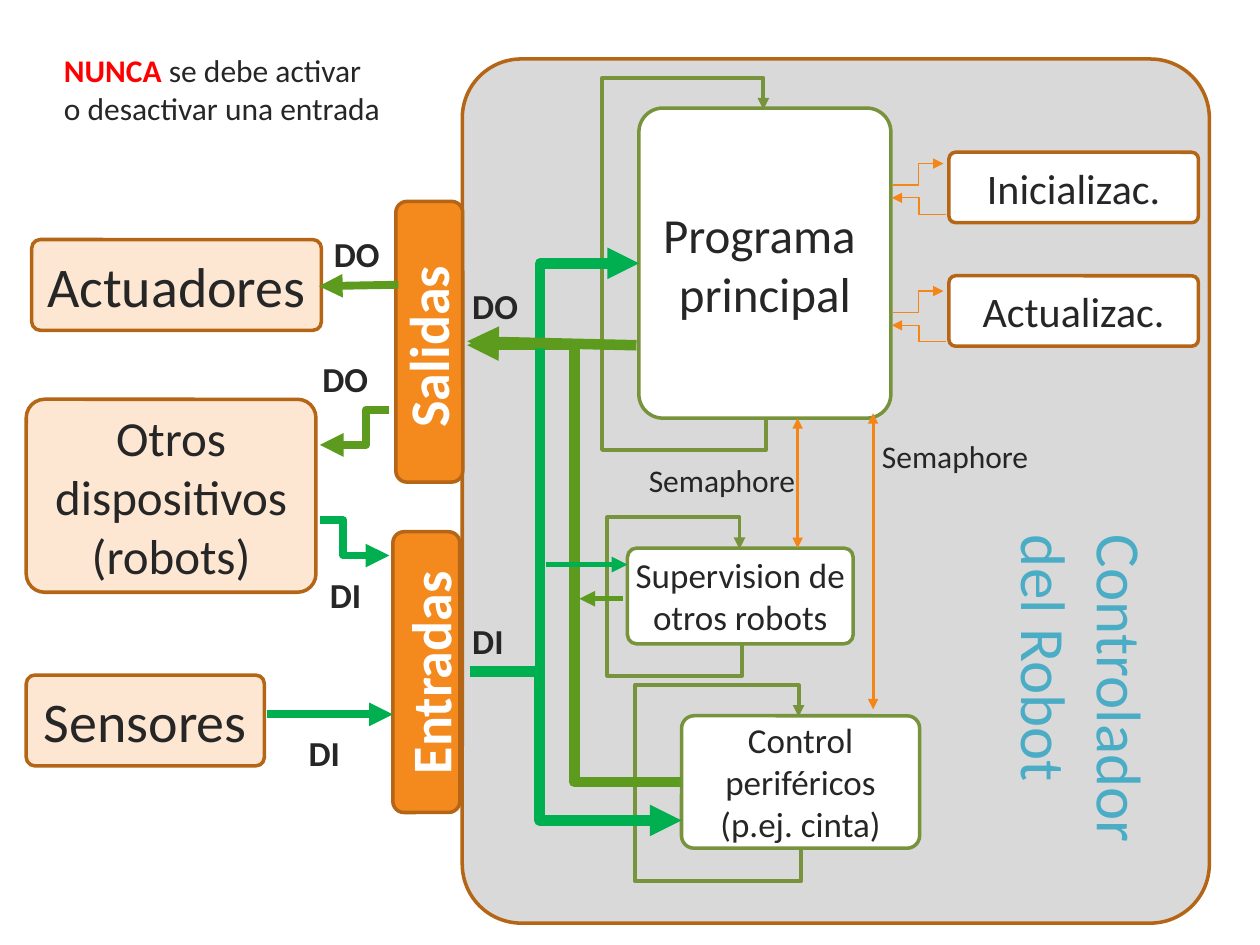
from dataclasses import dataclass
from typing import Any

import lxml.etree
import pptx
import pptx.dml.color
import pptx.enum.shapes
import pptx.enum.text
import pptx.oxml.ns
import pptx.util

Cm = pptx.util.Cm
Pt = pptx.util.Pt
ALIGN = pptx.enum.text.PP_ALIGN

COLORS = {
    "panel": "D9D9D9", "white": "FFFFFF", "peach": "FDE7D2", "orange": "F4891E",
    "brown": "B56516", "olive": "77933C", "text": "262626", "red": "FF0000",
    "blue": "4BACC6", "input": "00B050", "output": "5C9B1D", "call": "F48618",
}


@dataclass
class Run:
    text: str
    size: float
    color: str = "text"
    bold: bool = False


@dataclass
class Block:
    left: float
    top: float
    width: float
    height: float
    fill: str
    line: str
    lines: tuple[str, ...] = ()
    size: float = 32
    corner: float = 0.095
    side_inset: float = 0.25


@dataclass
class Label:
    left: float
    top: float
    width: float
    height: float
    paragraphs: list[list[Run]]
    rotation: float = 0


@dataclass
class Arrow:
    start: tuple[float, float]
    end: tuple[float, float]
    color: str
    width: float
    bend: float | None = None  # share of the way across at which an elbow turns
    both_ends: bool = False


@dataclass
class Loop:
    left: float
    right: float
    top: float
    bottom: float


def rgb(name: str) -> pptx.dml.color.RGBColor:
    return pptx.dml.color.RGBColor.from_string(COLORS[name])


def write_text(frame: Any, paragraphs: list[list[Run]], alignment: Any) -> None:
    for index, runs in enumerate(paragraphs):
        paragraph = frame.paragraphs[0] if index == 0 else frame.add_paragraph()
        paragraph.alignment = alignment
        for item in runs:
            run = paragraph.add_run()
            run.text = item.text
            run.font.name = "Calibri"
            run.font.size = Pt(item.size)
            run.font.bold = item.bold
            run.font.color.rgb = rgb(item.color)


def draw_block(shapes: Any, block: Block) -> None:
    shape = shapes.add_shape(
        pptx.enum.shapes.MSO_SHAPE.ROUNDED_RECTANGLE,
        Cm(block.left), Cm(block.top), Cm(block.width), Cm(block.height))
    shape.shadow.inherit = False
    shape.adjustments[0] = block.corner
    shape.fill.solid()
    shape.fill.fore_color.rgb = rgb(block.fill)
    shape.line.color.rgb = rgb(block.line)
    shape.line.width = Pt(2)
    frame = shape.text_frame
    frame.word_wrap = True
    frame.vertical_anchor = pptx.enum.text.MSO_ANCHOR.MIDDLE
    frame.margin_left = frame.margin_right = Cm(block.side_inset)
    write_text(frame, [[Run(line, block.size)] for line in block.lines], ALIGN.CENTER)


def draw_label(shapes: Any, label: Label) -> None:
    box = shapes.add_textbox(
        Cm(label.left), Cm(label.top), Cm(label.width), Cm(label.height))
    box.rotation = label.rotation
    box.text_frame.word_wrap = False
    write_text(box.text_frame, label.paragraphs, ALIGN.LEFT)


def set_bends(connector: Any, bends: list[float]) -> None:
    guides = connector.element.spPr.find(".//" + pptx.oxml.ns.qn("a:avLst"))
    for number, bend in enumerate(bends, 1):
        lxml.etree.SubElement(guides, pptx.oxml.ns.qn("a:gd"),
                              name=f"adj{number}", fmla=f"val {round(bend * 100000)}")


def draw_arrow(shapes: Any, arrow: Arrow) -> Any:
    kinds = pptx.enum.shapes.MSO_CONNECTOR
    connector = shapes.add_connector(
        kinds.STRAIGHT if arrow.bend is None else kinds.ELBOW,
        Cm(arrow.start[0]), Cm(arrow.start[1]), Cm(arrow.end[0]), Cm(arrow.end[1]))
    connector.line.color.rgb = rgb(arrow.color)
    connector.line.width = Pt(arrow.width)
    properties = connector.element.spPr
    outline = properties.find(pptx.oxml.ns.qn("a:ln"))
    for tag in ("a:headEnd", "a:tailEnd") if arrow.both_ends else ("a:tailEnd",):
        lxml.etree.SubElement(outline, pptx.oxml.ns.qn(tag), type="triangle")
    lxml.etree.SubElement(properties, pptx.oxml.ns.qn("a:effectLst"))
    if arrow.bend is not None:
        set_bends(connector, [arrow.bend])
    return connector


def draw_loop(shapes: Any, loop: Loop) -> None:
    """Leave a block at the bottom, pass round its left side, come back at the top."""
    shift, overhang = 0.05, 0.64
    length = loop.bottom - loop.top
    left = loop.right - (shift + length) / 2
    top = (loop.top + loop.bottom - shift) / 2
    connector = draw_arrow(shapes, Arrow(
        (left, top), (left + length, top + shift), "olive", 2.25))
    frame = connector.element.spPr.find(pptx.oxml.ns.qn("a:xfrm"))
    frame.set("rot", "5400000")
    frame.set("flipH", "1")
    geometry = connector.element.spPr.find(pptx.oxml.ns.qn("a:prstGeom"))
    geometry.set("prst", "bentConnector5")
    set_bends(connector, [-overhang / length, (loop.right - loop.left) / shift,
                          1 + overhang / length])


PANEL = Block(9.32, 1.19, 15.06, 17.42, "panel", "brown", corner=0.079)
BLOCKS = [
    Block(12.88, 2.18, 5.08, 6.25, "white", "olive", ("Programa ", "principal"), 28),
    Block(0.53, 13.61, 4.8, 1.83, "peach", "brown", ("Sensores",)),
    Block(0.64, 4.83, 5.84, 1.83, "peach", "brown", ("Actuadores",)),
    Block(0.53, 8.05, 5.84, 3.89, "peach", "brown", ("Otros dispositivos (robots)",), 28),
    Block(13.74, 14.43, 4.8, 2.67, "white", "olive",
          ("Control periféricos", "(p.ej. cinta)"), 20),
    Block(12.65, 11.05, 4.55, 1.93, "white", "olive",
          ("Supervision de otros robots",), 20, side_inset=0),
    Block(19.13, 3.07, 5.03, 1.42, "white", "brown", ("Inicializac.",), 24),
    Block(19.13, 5.56, 5.03, 1.42, "white", "brown", ("Actualizac.",), 24),
]
BARS = [
    (Block(7.98, 4.06, 1.35, 5.66, "orange", "brown", corner=0.167),
     Label(6.71, 6.15, 3.81, 1.63, [[Run("Salidas", 32, "white", True)]], 270)),
    (Block(7.92, 10.72, 1.35, 5.66, "orange", "brown", corner=0.167),
     Label(6.35, 12.73, 4.62, 1.63, [[Run("Entradas", 32, "white", True)]], 270)),
]
LOOPS = [Loop(12.24, 14.96, 11.07, 12.98), Loop(12.8, 16.15, 14.45, 17.12),
         Loop(12.14, 15.44, 2.21, 8.43)]
DEVICE_ARROWS = [
    Arrow((5.38, 14.4), (7.92, 14.4), "input", 4.5),
    Arrow((8.03, 5.74), (6.43, 5.77), "output", 4.5),
    Arrow((7.85, 8.26), (6.45, 8.97), "output", 4.5, 0.339),
    Arrow((6.45, 10.49), (7.85, 11.2), "input", 4.5, 0.339),
]
CALL_ARROWS = [
    arrow for offset in (0, 2.57) for arrow in (
        Arrow((18.01, 3.73 + offset), (19.02, 3.3 + offset), "call", 0.75, 0.5),
        Arrow((19.08, 4.32 + offset), (17.98, 3.99 + offset), "call", 0.75, 0.5))
]
SEMAPHORE_ARROWS = [
    Arrow((16.08, 11.05), (16.08, 8.43), "call", 1.75, both_ends=True),
    Arrow((17.6, 14.3), (17.6, 8.33), "call", 1.75, both_ends=True),
]
SIGNAL_ARROWS = [
    Arrow((13.74, 15.77), (9.42, 6.96), "output", 6, 0.5),
    Arrow((9.47, 13.54), (12.88, 5.31), "input", 6, 0.417),
    Arrow((9.47, 13.54), (13.74, 16.54), "input", 6, 0.33),
    Arrow((12.83, 6.96), (9.42, 6.88), "output", 6),
    Arrow((11, 11.38), (12.65, 11.38), "input", 3),
    Arrow((12.55, 12.07), (11.68, 12.07), "output", 3),
]
SIGNALS = [("DO", 9.27, 5.61), ("DI", 9.27, 12.37), ("DO", 6.48, 4.57),
           ("DO", 6.25, 7.09), ("DI", 6.4, 11.43), ("DI", 5.97, 14.63)]
LABELS = [
    *(Label(left, top, 3.51, 1.02, [[Run("Semaphore", 18)]])
      for left, top in ((12.83, 9.17), (17.53, 8.69))),
    *(Label(left, top, 1.45 if name == "DO" else 1.14, 1.12, [[Run(name, 20, bold=True)]])
      for name, left, top in SIGNALS),
    Label(18.31, 12.4, 7.06, 3.33,
          [[Run("Controlador", 36, "blue")], [Run("del Robot", 36, "blue")]], 90),
    Label(1.04, 0.91, 6.96, 1.8,
          [[Run("NUNCA ", 18, "red", True), Run("se debe activar", 18)],
           [Run("o desactivar una entrada", 18)]]),
]


def main() -> None:
    presentation = pptx.Presentation()
    presentation.slide_width, presentation.slide_height = Cm(25.4), Cm(19.05)
    shapes = presentation.slides.add_slide(presentation.slide_layouts[6]).shapes
    # Controller panel with its input and output bars
    draw_block(shapes, PANEL)
    for bar, title in BARS:
        group = shapes.add_group_shape()
        draw_block(group.shapes, bar)
        draw_label(group.shapes, title)
    # Devices and program tasks
    for block in BLOCKS:
        draw_block(shapes, block)
    # Cycles and signals
    for loop in LOOPS:
        draw_loop(shapes, loop)
    for arrow in DEVICE_ARROWS + CALL_ARROWS + SEMAPHORE_ARROWS + SIGNAL_ARROWS:
        draw_arrow(shapes, arrow)
    # Captions
    for label in LABELS:
        draw_label(shapes, label)
    presentation.save("out.pptx")


if __name__ == "__main__":
    main()
